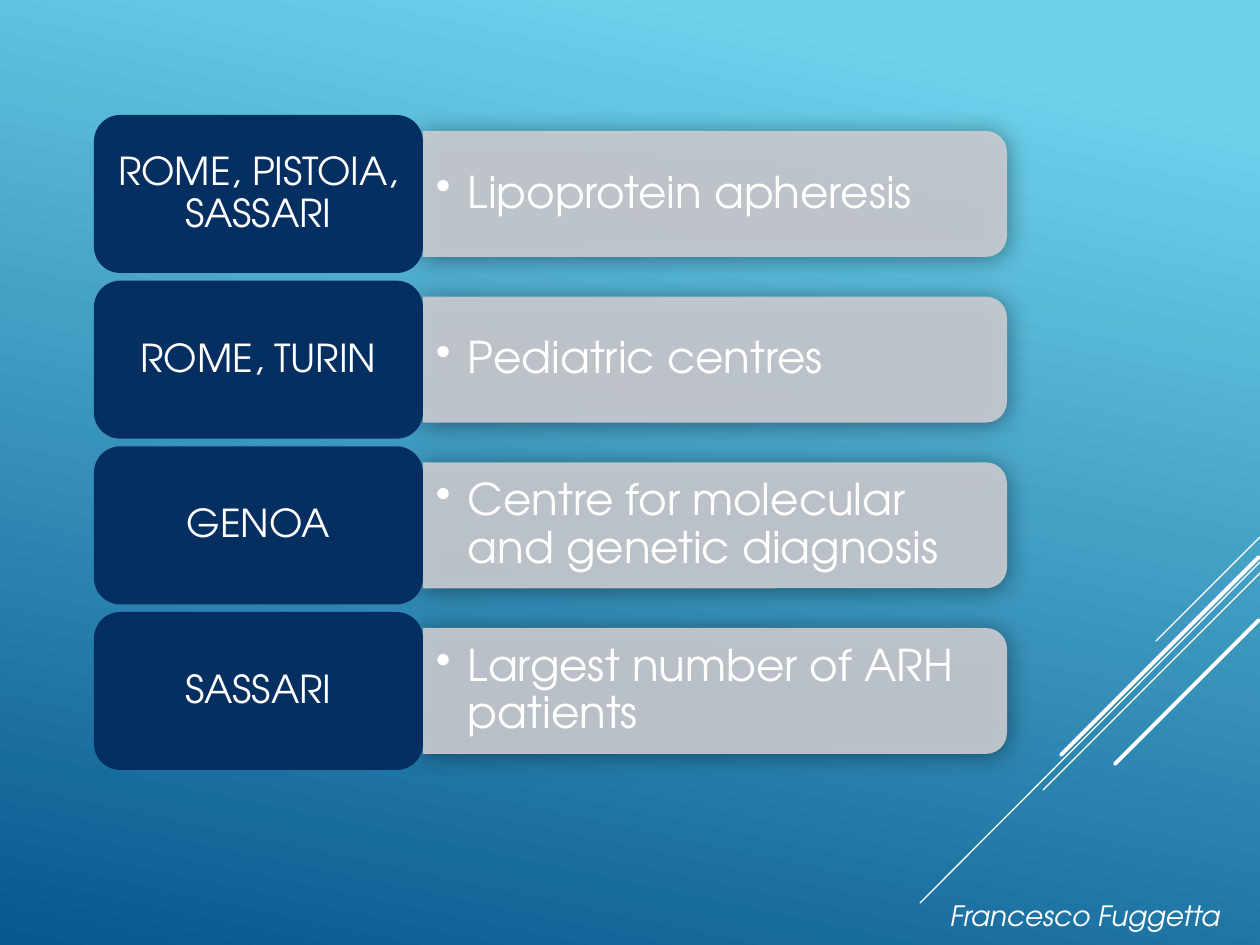
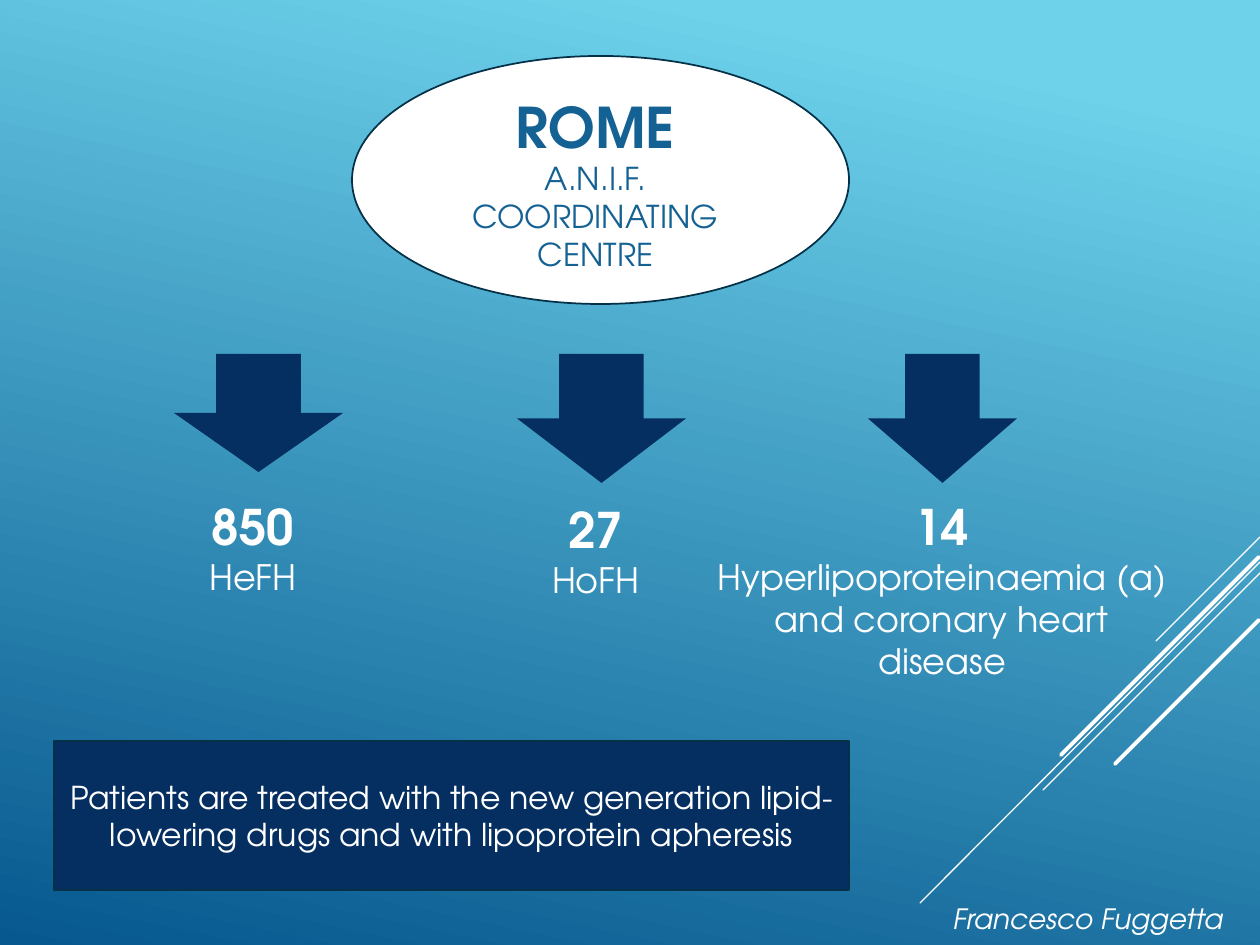
from lxml import etree
from pptx import Presentation
from pptx.dml.color import RGBColor
from pptx.enum.shapes import MSO_CONNECTOR, MSO_SHAPE
from pptx.enum.text import MSO_ANCHOR, PP_ALIGN
from pptx.oxml.ns import qn
from pptx.util import Pt

EMU_PER_PX = 914400 / 126
FONT = "TeX Gyre Adventor"
LEFT, CENTER = PP_ALIGN.LEFT, PP_ALIGN.CENTER
TOP, MIDDLE = MSO_ANCHOR.TOP, MSO_ANCHOR.MIDDLE
STRAIGHT = MSO_CONNECTOR.STRAIGHT
RECTANGLE, OVAL = MSO_SHAPE.RECTANGLE, MSO_SHAPE.OVAL
ROUNDED, ROUNDED_TOP = MSO_SHAPE.ROUNDED_RECTANGLE, MSO_SHAPE.ROUND_2_SAME_RECTANGLE
DOWN_ARROW = MSO_SHAPE.DOWN_ARROW

SKY = RGBColor(0x6E, 0xD2, 0xEB)
SEA = RGBColor(0x06, 0x58, 0x8E)
NAVY = RGBColor(0x05, 0x2F, 0x61)
OUTLINE = RGBColor(0x04, 0x31, 0x48)
BLUE = RGBColor(0x14, 0x61, 0x94)
SILVER = RGBColor(0xCC, 0xCD, 0xD2)
WHITE = RGBColor(0xFF, 0xFF, 0xFF)

PAGE_WIDTH, PAGE_HEIGHT = 1260, 945
AUTHOR = "Francesco Fuggetta"
STREAKS = [  # start x, start y, end x, end y, width in points
    (1260, 537, 1156, 641, 0.75),
    (1260, 562, 920, 903, 0.75),
    (1260, 573, 1043, 790, 0.75),
    (1259, 557, 1061, 755, 2.25),
    (1259, 620, 1115, 764, 2.25),
]
CENTRES = [
    ("ROME, PISTOIA, SASSARI", "Lipoprotein apheresis"),
    ("ROME, TURIN", "Pediatric centres"),
    ("GENOA", "Centre for molecular and genetic diagnosis"),
    ("SASSARI", "Largest number of ARH patients"),
]
PATIENT_GROUPS = [  # arrow box, text box, number, caption
    ((174, 354, 169, 118), (89, 491, 328, 115), "850", "HeFH"),
    ((517, 354, 169, 129), (432, 494, 328, 115), "27", "HoFH"),
    ((868, 354, 149, 129), (704, 491, 476, 199), "14",
     "Hyperlipoproteinaemia (a) and coronary heart disease"),
]


def px(length):
    return round(length * EMU_PER_PX)


def add_block(page, kind, box, fill, outline=None):
    block = page.shapes.add_shape(kind, *map(px, box))
    block.shadow.inherit = False
    block.fill.solid()
    block.fill.fore_color.rgb = fill
    if outline is None:
        block.line.fill.background()
    else:
        block.line.color.rgb = outline
        block.line.width = Pt(1)
    return block


def write(shape, lines, color=WHITE, align=CENTER, anchor=TOP, insets=(13, 6),
          spacing=None, italic=None):
    """Fill a shape with paragraphs, each given as (text, size, bold)."""
    frame = shape.text_frame
    frame.word_wrap = True
    frame.vertical_anchor = anchor
    frame.margin_left = frame.margin_right = px(insets[0])
    frame.margin_top = frame.margin_bottom = px(insets[1])
    for index, (text, size, bold) in enumerate(lines):
        para = frame.add_paragraph() if index else frame.paragraphs[0]
        para.text = text
        para.alignment = align
        para.line_spacing = spacing
        font = para.font
        font.name, font.size, font.bold, font.italic = FONT, Pt(size), bold, italic
        font.color.rgb = color


def add_text(page, box, lines, **style):
    text_box = page.shapes.add_textbox(*map(px, box))
    write(text_box, lines, **style)
    return text_box


def add_bullet(para, indent):
    properties = para._p.get_or_add_pPr()
    properties.set("marL", str(px(indent)))
    properties.set("indent", str(-px(indent)))
    bullet = etree.Element(qn("a:buChar"), char="•")
    properties.find(qn("a:defRPr")).addprevious(bullet)


def add_soft_shadow(shape):
    effects = shape._element.spPr.find(qn("a:effectLst"))
    shadow = etree.SubElement(effects, qn("a:outerShdw"), blurRad=str(px(24)),
                              dist=str(px(2)), dir="5400000", rotWithShape="0")
    shade = etree.SubElement(shadow, qn("a:srgbClr"), val="000000")
    etree.SubElement(shade, qn("a:alpha"), val="45000")


def set_opacity(shape, percent):
    color = shape._element.spPr.find(qn("a:solidFill")).find(qn("a:srgbClr"))
    etree.SubElement(color, qn("a:alpha"), val=str(percent * 1000))


def paint_background(master):
    fill = master.background.fill
    fill.gradient()
    fill.gradient_angle = 360 - 102
    for stop, color, position in zip(fill.gradient_stops, (SKY, SEA), (0.1, 1)):
        stop.color.rgb = color
        stop.position = position


def add_streak(page, start_x, start_y, end_x, end_y, width):
    streak = page.shapes.add_connector(
        STRAIGHT, px(start_x), px(start_y), px(end_x), px(end_y))
    streak.line.color.rgb = WHITE
    streak.line.width = Pt(width)
    properties = streak._element.spPr
    properties.get_or_add_ln().set("cap", "rnd")
    etree.SubElement(properties, qn("a:effectLst"))


def add_page(deck, author_left, author_top):
    """Add a blank page with the diagonal streaks and the author's name."""
    page = deck.slides.add_slide(deck.slide_layouts[6])
    for streak in STREAKS:
        add_streak(page, *streak)
    add_text(page, (author_left, author_top, 302, 47), [(AUTHOR, 16, None)],
             align=LEFT, italic=True)
    return page


def add_centre_row(page, box, city, role):
    left, top, width, height = box
    label_width, bar_inset = 329, 16
    bar_left, bar_top = left + label_width, top + bar_inset
    bar_width, bar_height = width - label_width, height - 2 * bar_inset

    # The bar stands upright and is turned, so its rounded end faces right.
    offset = (bar_width - bar_height) / 2
    bar = add_block(page, ROUNDED_TOP,
                    (bar_left + offset, bar_top - offset, bar_height, bar_width), SILVER)
    bar.rotation = 90
    set_opacity(bar, 90)
    add_soft_shadow(bar)
    role_box = add_text(page, (bar_left, bar_top, bar_width - 6, bar_height),
                        [(role, 25, None)], align=LEFT, anchor=MIDDLE, spacing=0.9)
    add_bullet(role_box.text_frame.paragraphs[0], 32)

    label = add_block(page, ROUNDED, (left, top, label_width, height), NAVY)
    write(label, [(city, 22, None)], anchor=MIDDLE, insets=(11, 6), spacing=0.9)


def build_centres(deck):
    page = add_page(deck, 937, 892)
    left, top, width, height = 94, 115, 913, 655
    row_height = 158
    pitch = (height - row_height) / (len(CENTRES) - 1)
    for index, (city, role) in enumerate(CENTRES):
        add_centre_row(page, (left, top + index * pitch, width, row_height), city, role)


def build_coordination(deck):
    page = add_page(deck, 940, 896)
    add_block(page, OVAL, (352, 56, 497, 248), WHITE, OUTLINE)
    add_text(page, (412, 86, 367, 195),
             [("ROME", 32, True), ("A.N.I.F. COORDINATING CENTRE", 18, False)], color=BLUE)
    for arrow_box, text_box, number, caption in PATIENT_GROUPS:
        add_block(page, DOWN_ARROW, arrow_box, NAVY)
        add_text(page, text_box, [(number, 28, True), (caption, 20, False)])
    treatment = add_block(page, RECTANGLE, (54, 741, 795, 149), NAVY, OUTLINE)
    write(treatment, [("Patients are treated with the new generation lipid-lowering drugs "
                       "and with lipoprotein apheresis", 18, None)], anchor=MIDDLE)


def main():
    deck = Presentation()
    deck.slide_width, deck.slide_height = px(PAGE_WIDTH), px(PAGE_HEIGHT)
    paint_background(deck.slide_master)
    build_centres(deck)
    build_coordination(deck)
    deck.save("out.pptx")


if __name__ == "__main__":
    main()
